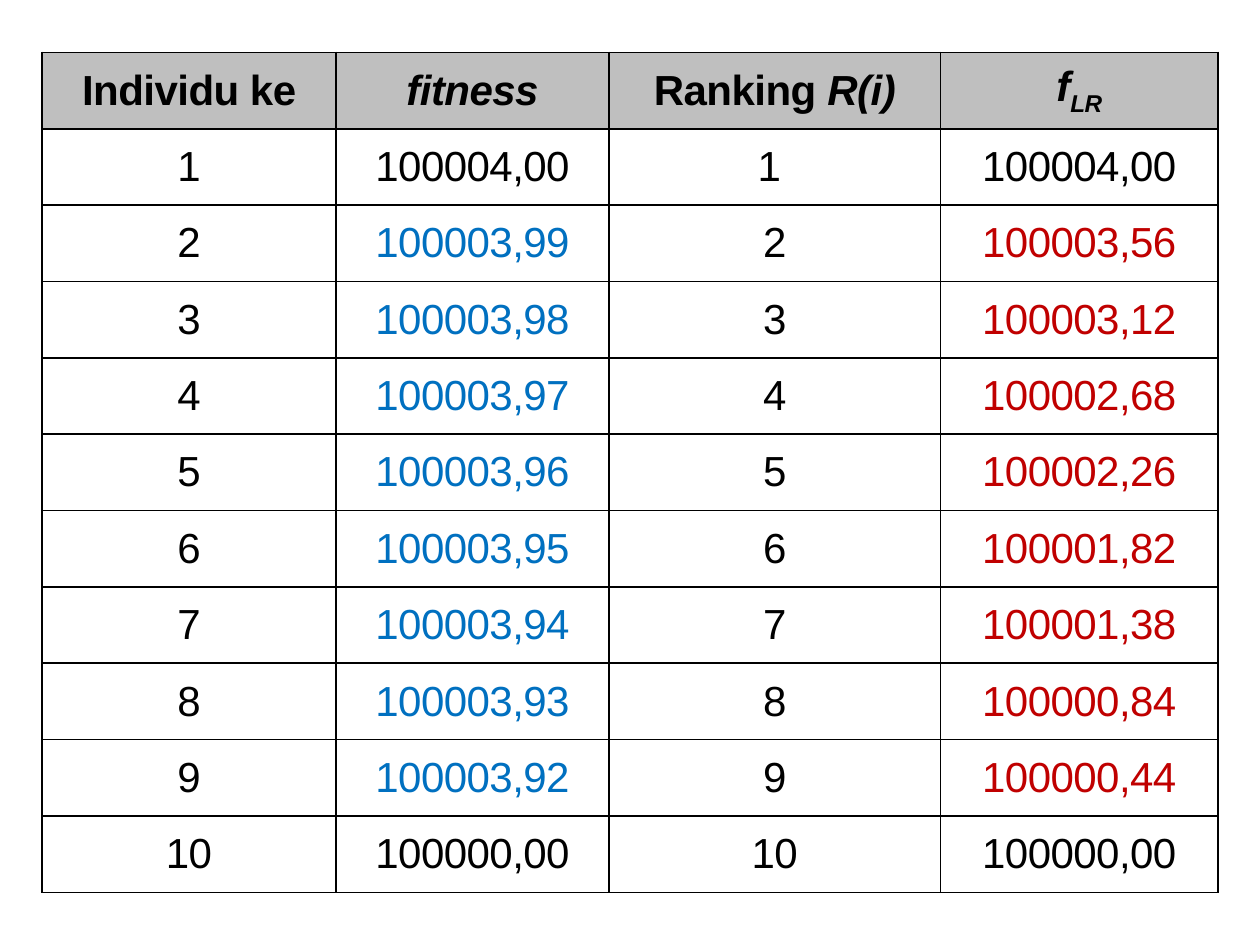
"""Build a slide with a table of fitness values and linear ranking."""
import pptx
import pptx.dml.color
import pptx.enum.text
import pptx.oxml
import pptx.oxml.ns
import pptx.util

Pt = pptx.util.Pt


def color(value):
    return pptx.dml.color.RGBColor.from_string(value)


def add_border(tcPr, side):
    tcPr.append(pptx.oxml.parse_xml(
        f'<a:{side} {pptx.oxml.ns.nsdecls("a")} w="{Pt(1)}"><a:solidFill>'
        f'<a:srgbClr val="000000"/></a:solidFill></a:{side}>'))


prs = pptx.Presentation()
prs.slide_width, prs.slide_height = Pt(720), Pt(540)
s = prs.slides.add_slide(prs.slide_layouts[6])

headers = [["Individu ke"], ["fitness"], ["Ranking ", "R(i)"], ["f", "LR"]]
italics = {"fitness", "R(i)", "f", "LR"}
fitness = ["100004,00", "100003,99", "100003,98", "100003,97", "100003,96",
           "100003,95", "100003,94", "100003,93", "100003,92", "100000,00"]
f_lr = ["100004,00", "100003,56", "100003,12", "100002,68", "100002,26",
        "100001,82", "100001,38", "100000,84", "100000,44", "100000,00"]
rows = [headers]
for i, (fit, lr) in enumerate(zip(fitness, f_lr), 1):
    rank = "1 " if i == 1 else str(i)
    rows.append([[str(i)], [fit], [rank], [lr]])

widths = [168, 156, 189.5, 158.5]
row_height = 43.65
tbl = s.shapes.add_table(len(rows), len(widths), Pt(24), Pt(30),
                         Pt(sum(widths)), Pt(row_height * len(rows))).table
tbl.first_row = tbl.horz_banding = False
for col, width in zip(tbl.columns, widths):
    col.width = Pt(width)

column_colors = ["000000", "0070C0", "000000", "C00000"]
for i, row in enumerate(rows):
    tbl.rows[i].height = Pt(row_height)
    for j, texts in enumerate(row):
        cell = tbl.cell(i, j)
        cell.margin_left = cell.margin_right = Pt(5)
        cell.margin_top = cell.margin_bottom = 0
        cell.vertical_anchor = pptx.enum.text.MSO_ANCHOR.MIDDLE
        for side in ("lnL", "lnR", "lnT", "lnB"):
            add_border(cell._tc.get_or_add_tcPr(), side)
        if i == 0:
            cell.fill.solid()
            cell.fill.fore_color.rgb = color("BFBFBF")
        else:
            cell.fill.background()
        p = cell.text_frame.paragraphs[0]
        p.alignment = pptx.enum.text.PP_ALIGN.CENTER
        for text in texts:
            r = p.add_run()
            r.text = text
            r.font.name = "Arial"
            r.font.size = Pt(24)
            r.font.bold = i == 0
            r.font.italic = text in italics
            inner = 1 < i < len(rows) - 1
            r.font.color.rgb = color(column_colors[j] if inner else "000000")
            rPr = r._r.get_or_add_rPr()
            rPr.set("spc", "-30")
            if text == "LR":
                rPr.set("baseline", "-25000")

prs.save("out.pptx")
